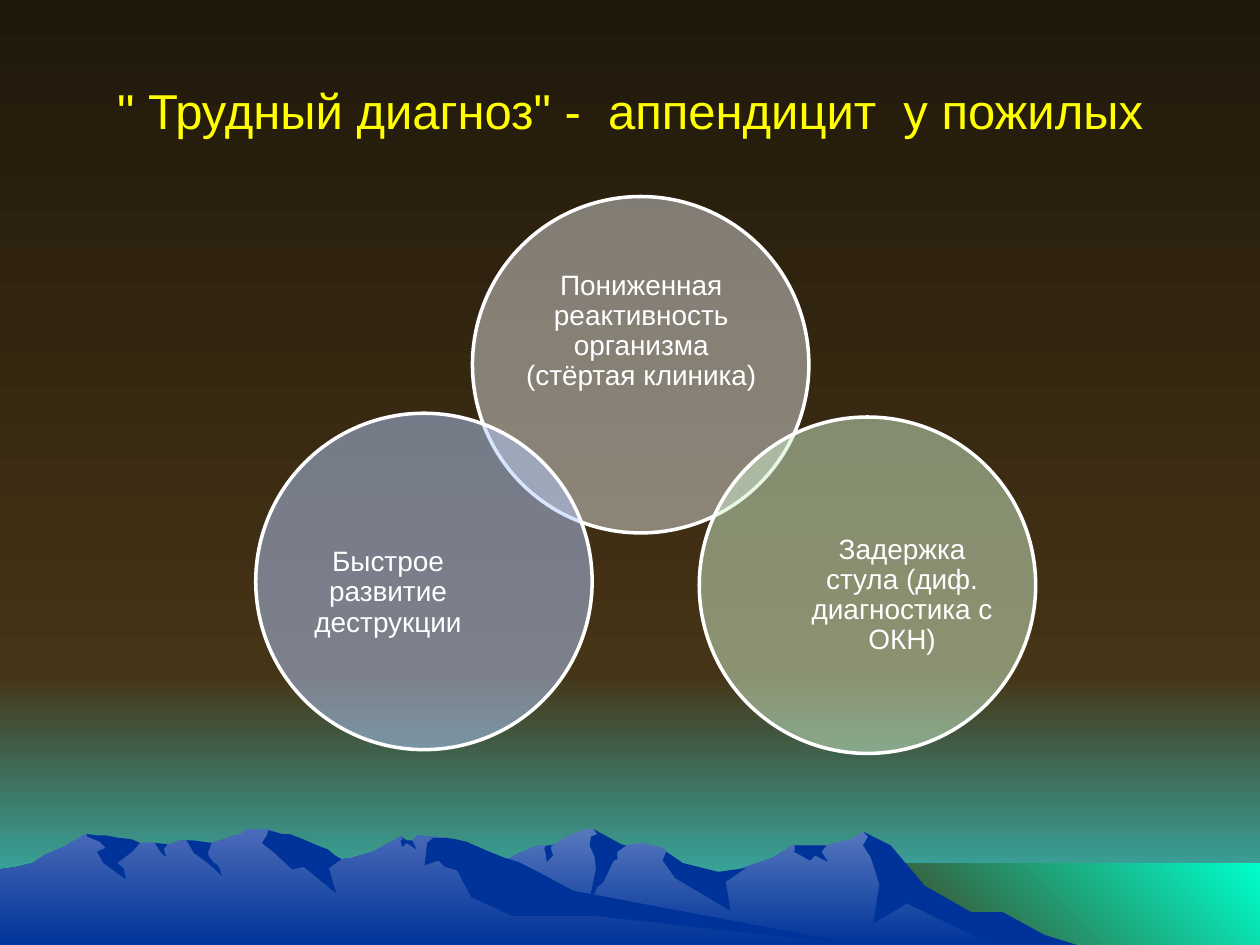
"""Build a slide with three overlapping circles above a mountain view."""
from pptx import Presentation
from pptx.dml.color import RGBColor
from pptx.enum.shapes import MSO_SHAPE
from pptx.enum.text import MSO_ANCHOR, PP_ALIGN
from pptx.oxml.ns import qn
from pptx.oxml.xmlchemy import OxmlElement
from pptx.util import Pt

OVAL = MSO_SHAPE.OVAL
MIDDLE = MSO_ANCHOR.MIDDLE
CENTER = PP_ALIGN.CENTER

PX = 9144
WIDE, HIGH = 1000, 750
FONT = "Arial"

WHITE = RGBColor(0xFF, 0xFF, 0xFF)
YELLOW = RGBColor(0xFF, 0xFF, 0x00)
NAVY = RGBColor(0x00, 0x19, 0x4C)
BLUE = RGBColor(0x00, 0x33, 0x99)
HAZE = RGBColor(0x57, 0x78, 0xBD)
MIST = RGBColor(0x4A, 0x6B, 0xB8)
DARK = RGBColor(0x20, 0x18, 0x0B)
BROWN = RGBColor(0x46, 0x34, 0x16)
TEAL = RGBColor(0x33, 0xCC, 0xCC)
MINT = RGBColor(0x00, 0xFF, 0xCC)
GREY = RGBColor(0xDA, 0xDA, 0xDA)
GREEN = RGBColor(0xCF, 0xF0, 0xCC)
SKY = RGBColor(0xB3, 0xCC, 0xFF)

TITLE = "\" Трудный диагноз\" -  аппендицит  у пожилых"
TITLE_BOX = (50, 25, 900, 125)
DISC = 267

# left, top, colour, text box, wording
DISCS = [
    (375, 156, GREY, (411, 203, 196, 120),
     "Пониженная реактивность организма (стёртая клиника)"),
    (555, 331, GREEN, (636, 399, 160, 147),
     "Задержка стула (диф. диагностика с ОКН)"),
    (203, 328, SKY, (228, 397, 160, 147),
     "Быстрое развитие деструкции"),
]

# left, top, right, bottom, first colour, last colour, angle
BANDS = [
    (0, 533, WIDE, HIGH, BROWN, TEAL, 270),
    (0, 0, WIDE, 533, DARK, BROWN, 270),
    (683, 685, WIDE, HIGH, BROWN, MINT, 45),
]

FAR = [
    (802, 740), (778, 727), (764, 723), (723, 698), (702, 671), (685, 660),
    (676, 666), (656, 671), (629, 671), (613, 681), (566, 697), (536, 690),
    (529, 676), (526, 673), (509, 669), (497, 671), (486, 673), (474, 661),
    (471, 658), (465, 658), (450, 664), (448, 665), (444, 668), (438, 671),
    (430, 671), (424, 672), (418, 675), (412, 677), (405, 681), (399, 683),
    (394, 685), (355, 698), (327, 709), (277, 739), (258, 751), (821, 751),
]
NEAR = [
    (690, 751), (667, 748), (432, 712), (354, 665), (331, 663), (327, 668),
    (323, 668), (318, 664), (296, 676), (279, 681), (271, 682), (260, 676),
    (236, 681), (223, 663), (219, 660), (212, 658), (196, 658), (191, 662),
    (183, 664), (178, 666), (168, 669), (160, 671), (148, 667), (143, 667),
    (132, 671), (128, 671), (123, 669), (111, 669), (94, 671), (68, 662),
    (56, 669), (53, 671), (46, 674), (35, 679), (26, 685), (14, 688),
    (0, 690), (0, 751),
]
FAR_DARK = [
    [(796, 724), (771, 724), (734, 703), (707, 671), (685, 660), (689, 664),
     (685, 671), (691, 680), (698, 702), (693, 733), (720, 717), (792, 752),
     (858, 751), (829, 742)],
    [(471, 658), (474, 662), (469, 664), (468, 671), (472, 680), (473, 690),
     (465, 727), (474, 704), (479, 700), (487, 683), (490, 682), (490, 676),
     (497, 671), (493, 670)],
    [(529, 676), (528, 678), (526, 683), (536, 697), (580, 723), (576, 700),
     (592, 689), (570, 692), (542, 685)],
    [(650, 671), (630, 671), (631, 672), (631, 675), (630, 676), (643, 683),
     (647, 679), (657, 684), (652, 676), (656, 671)],
    [(433, 677), (432, 673), (434, 671), (438, 671), (439, 670), (437, 673),
     (439, 679), (434, 684)],
]
NEAR_DARK = [
    [(212, 663), (208, 669), (219, 678), (232, 690), (241, 688), (267, 709),
     (261, 689), (271, 682), (266, 679), (260, 674), (252, 671), (245, 668),
     (238, 665), (230, 662), (224, 662), (217, 660), (213, 659)],
    [(370, 668), (361, 666), (354, 665), (344, 665), (339, 669), (337, 687),
     (348, 683), (353, 688), (363, 691), (374, 712), (407, 727), (472, 727),
     (690, 751), (683, 750), (455, 707), (427, 692), (411, 684), (401, 681),
     (386, 675)],
    [(318, 667), (320, 666), (318, 664), (323, 667), (327, 667), (328, 669),
     (330, 673), (330, 674), (326, 671), (322, 669), (321, 671), (319, 672)],
    [(154, 667), (161, 668), (168, 669), (165, 677), (166, 680), (169, 684),
     (173, 687), (175, 691), (176, 695), (165, 685), (154, 677), (148, 667)],
    [(133, 670), (130, 674), (131, 677), (132, 680), (129, 678), (126, 674),
     (123, 669)],
    [(109, 668), (111, 669), (105, 676), (93, 685), (98, 689), (100, 698),
     (82, 685), (77, 676), (84, 673), (79, 668), (69, 664), (69, 662),
     (77, 663), (84, 663), (94, 665), (104, 666)],
]


def shade(fill, first, last, angle):
    fill.gradient()
    fill.gradient_angle = angle
    for stop, tone in zip(fill.gradient_stops, (first, last)):
        stop.color.rgb = tone


def trace(slide, points, first, last=None, angle=270):
    pen = slide.shapes.build_freeform(*points[0], scale=PX)
    pen.add_line_segments(points[1:], close=True)
    shape = pen.convert_to_shape()
    shape.shadow.inherit = False
    shape.line.fill.background()
    if last is None:
        shape.fill.solid()
        shape.fill.fore_color.rgb = first
    else:
        shade(shape.fill, first, last, angle)


def write(slide, box, words, size, tone, inset, space):
    frame = slide.shapes.add_textbox(*(PX * n for n in box)).text_frame
    frame.word_wrap = True
    frame.vertical_anchor = MIDDLE
    frame.margin_left = frame.margin_right = 2 * inset * PX
    frame.margin_top = frame.margin_bottom = inset * PX
    para = frame.paragraphs[0]
    para.alignment = CENTER
    para.line_spacing = space
    run = para.add_run()
    run.text = words
    run.font.name = FONT
    run.font.size = Pt(size)
    run.font.color.rgb = tone


def draw_disc(slide, left, top, tone):
    disc = slide.shapes.add_shape(
        OVAL, left * PX, top * PX, DISC * PX, DISC * PX)
    disc.shadow.inherit = False
    disc.fill.solid()
    disc.fill.fore_color.rgb = tone
    alpha = OxmlElement("a:alpha")
    alpha.set("val", "50000")
    disc.element.spPr.find(".//" + qn("a:srgbClr")).append(alpha)
    disc.line.color.rgb = WHITE
    disc.line.width = Pt(2)


def main():
    deck = Presentation()
    deck.slide_width, deck.slide_height = WIDE * PX, HIGH * PX
    slide = deck.slides.add_slide(deck.slide_layouts[6])
    back = slide.background.fill
    back.solid()
    back.fore_color.rgb = NAVY

    for left, top, right, base, first, last, angle in BANDS:
        edge = [(right, base), (left, base), (left, top), (right, top)]
        trace(slide, edge, first, last, angle)
    for ridge, light, folds in ((FAR, HAZE, FAR_DARK), (NEAR, MIST, NEAR_DARK)):
        trace(slide, ridge, light, BLUE)
        for fold in folds:
            trace(slide, fold, BLUE)

    write(slide, TITLE_BOX, TITLE, 28, YELLOW, 5, 1.0)
    for left, top, tone, box, words in DISCS:
        draw_disc(slide, left, top, tone)
        write(slide, box, words, 16, WHITE, 0, 0.9)
    deck.save("out.pptx")


if __name__ == "__main__":
    main()
